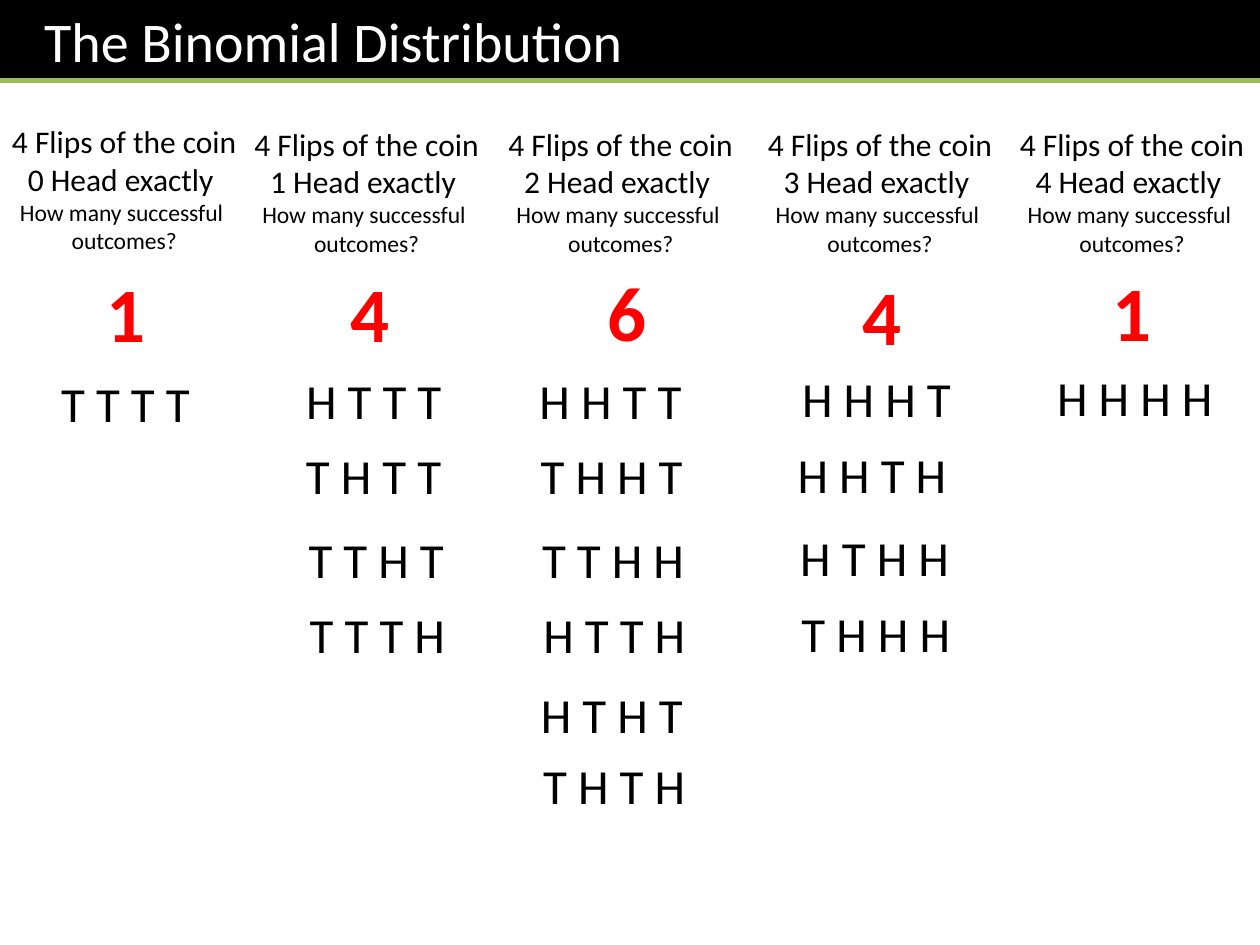
"""Build the slide that counts the outcomes of four coin flips by number of heads."""
from pptx import Presentation, util as u
from pptx.dml.color import RGBColor
from pptx.enum import shapes, text
from pptx.oxml.ns import qn
from lxml import etree

COLORS = {"ink": "000000", "paper": "FFFFFF", "count": "FF0000", "rule": "9BBB59"}
SLIDE_WIDTH, SLIDE_HEIGHT = 720, 540
BAR_HEIGHT = 46
ROW_TOPS = [208, 251.2, 298.8, 342, 387.4, 428.4]

COLUMNS = [
    {"prompt": (-10, 66.2, 162), "count": (54, 148.3), "shift": 2.2,
     "outcomes": [("T T T T", 20.9, 101.5)]},
    {"prompt": (136, 67.7, 147), "count": (193, 148.3), "shift": 0,
     "outcomes": [("H T T T", 164.9, 97.2), ("T H T T", 164.2, 98.6),
                  ("T T H T", 166.3, 97.2), ("T T T H", 167, 97.2)]},
    {"prompt": (278, 67.7, 153.4), "count": (339.8, 147.6), "shift": 0,
     "outcomes": [("H H T T", 300.2, 97.2), ("T H H T", 300.2, 98.6),
                  ("T T H H", 301.7, 97.2), ("H T T H", 302.4, 97.2),
                  ("H T H T", 298.8, 101.5), ("T H T H", 300.2, 101.5)]},
    {"prompt": (426.2, 67.7, 153.4), "count": (486, 149.8), "shift": -0.7,
     "outcomes": [("H H H T", 445.7, 110.2), ("H H T H", 445.7, 105.1),
                  ("H T H H", 445, 109.4), ("T H H H", 445.7, 109.4)]},
    {"prompt": (570.2, 67.7, 153.4), "count": (628.6, 147.6), "shift": -1.4,
     "outcomes": [("H H H H ", 596.2, 104.4)]},
]


class SlideWriter:
    """Hold the text style and the current slide."""

    def __init__(self, slide, font="Calibri"):
        self.slide = slide
        self.font = font

    def add_run(self, paragraph, words, size, color="ink", bold=False):
        run = paragraph.add_run()
        run.text = words
        run.font.name = self.font
        run.font.size = u.Pt(size)
        run.font.bold = bold
        run.font.color.rgb = RGBColor.from_string(COLORS[color])

    def title(self, words, height):
        heading = self.slide.shapes.title
        heading.left, heading.top = u.Pt(0), u.Pt(0)
        heading.width, heading.height = u.Pt(SLIDE_WIDTH), u.Pt(height)
        heading.fill.solid()
        heading.fill.fore_color.rgb = RGBColor.from_string(COLORS["ink"])
        frame = heading.text_frame
        frame.auto_size = text.MSO_AUTO_SIZE.NONE
        frame.vertical_anchor = text.MSO_ANCHOR.TOP
        frame.margin_left = u.Pt(25.2)
        frame.paragraphs[0].alignment = text.PP_ALIGN.LEFT
        self.add_run(frame.paragraphs[0], words, 32, "paper")

    def rule(self, top):
        line = self.slide.shapes.add_connector(
            shapes.MSO_CONNECTOR.STRAIGHT, u.Pt(0), u.Pt(top), u.Pt(SLIDE_WIDTH), u.Pt(top))
        line.line.color.rgb = RGBColor.from_string(COLORS["rule"])
        line.line.width = u.Pt(3)
        etree.SubElement(line._element.spPr, qn("a:effectLst"))

    def label(self, lines, left, top, width, height, color="ink", bold=False, wrap=True):
        box = self.slide.shapes.add_textbox(u.Pt(left), u.Pt(top), u.Pt(width), u.Pt(height))
        frame = box.text_frame
        frame.word_wrap = wrap
        for index, (words, size) in enumerate(lines):
            paragraph = frame.add_paragraph() if index else frame.paragraphs[0]
            paragraph.alignment = text.PP_ALIGN.CENTER
            self.add_run(paragraph, words, size, color, bold)


def main():
    deck = Presentation()
    deck.slide_width, deck.slide_height = u.Pt(SLIDE_WIDTH), u.Pt(SLIDE_HEIGHT)
    writer = SlideWriter(deck.slides.add_slide(deck.slide_layouts[5]))
    writer.title("The Binomial Distribution", BAR_HEIGHT)
    writer.rule(BAR_HEIGHT)

    for heads, column in enumerate(COLUMNS):
        outcomes = column["outcomes"]
        prompt = [("4 Flips of the coin", 18), (f"{heads} Head exactly ", 18),
                  ("How many successful ", 13.5), ("outcomes?", 13.5)]
        writer.label(prompt, *column["prompt"], 83.5)
        writer.label([(str(len(outcomes)), 44)], *column["count"], 34.6, 60.5,
                     color="count", bold=True, wrap=False)
        for (flips, left, width), top in zip(outcomes, ROW_TOPS):
            writer.label([(flips, 28)], left, top + column["shift"], width, 41)

    deck.save("out.pptx")


if __name__ == "__main__":
    main()
